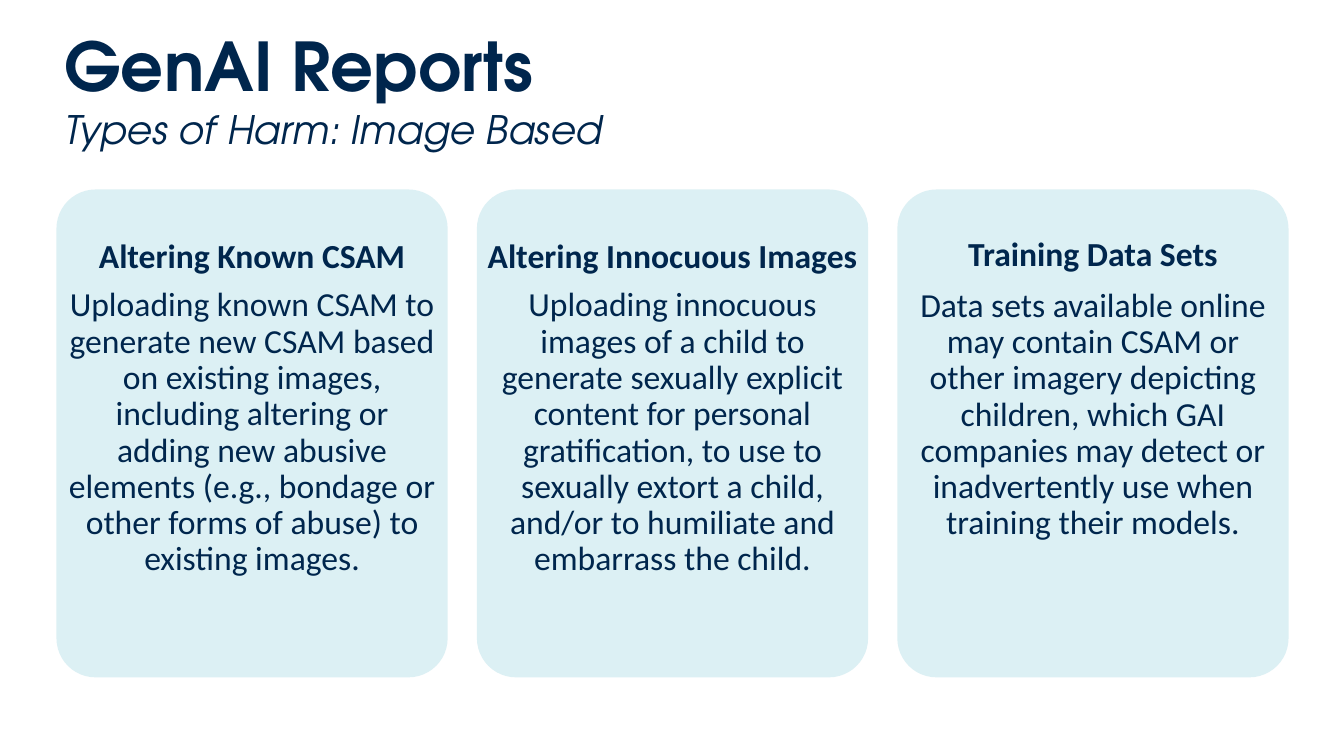
from pptx import Presentation
from pptx import util as u
from pptx.dml.color import RGBColor
from pptx.enum import shapes, text

COLORS = {"navy": "00264D", "card": "DCF0F4"}


def add_run(paragraph, words, size, face, bold=False, italic=False):
    run = paragraph.add_run()
    run.text = words
    run.font.size = u.Pt(size)
    run.font.name = face
    run.font.bold = bold
    run.font.italic = italic
    run.font.color.rgb = RGBColor.from_string(COLORS["navy"])


prs = Presentation()
prs.slide_width = u.Inches(13.33)
prs.slide_height = u.Inches(7.5)
slide = prs.slides.add_slide(prs.slide_layouts[5])

# Title and subtitle
title = slide.shapes.title
title.left, title.top = u.Inches(0.54), u.Inches(0.19)
title.width, title.height = u.Inches(11.93), u.Inches(1.38)
heading = title.text_frame
heading.word_wrap = True
heading.auto_size = text.MSO_AUTO_SIZE.NONE
heading.vertical_anchor = text.MSO_ANCHOR.TOP
topic = heading.paragraphs[0]
subtitle = heading.add_paragraph()
add_run(topic, "GenAI Reports", 48, "TeX Gyre Adventor", bold=True)
add_run(subtitle, "Types of Harm: Image Based", 28, "TeX Gyre Adventor", italic=True)
for line in (topic, subtitle):
    line.alignment = text.PP_ALIGN.LEFT

# Three cards: name, description, top of the text, space after the name
harms = [
    ("Altering Known CSAM",
     "Uploading known CSAM to generate new CSAM based on existing images, "
     "including altering or adding new abusive elements (e.g., bondage or "
     "other forms of abuse) to existing images.", 2.28, 8.4),
    ("Altering Innocuous Images",
     "Uploading innocuous images of a child to generate sexually explicit "
     "content for personal gratification, to use to sexually extort a child, "
     "and/or to humiliate and embarrass the child.", 2.28, 8.4),
    ("Training Data Sets",
     "Data sets available online may contain CSAM or other imagery depicting "
     "children, which GAI companies may detect or inadvertently use when "
     "training their models.", 2.26, 10.1),
]
CARD_LEFT, CARD_STEP, CARD_WIDTH = 0.56, 4.17, 3.88

for i, (harm, description, text_top, gap) in enumerate(harms):
    left = u.Inches(CARD_LEFT + i * CARD_STEP)
    width = u.Inches(CARD_WIDTH)
    card = slide.shapes.add_shape(
        shapes.MSO_SHAPE.ROUNDED_RECTANGLE, left, u.Inches(1.88), width, u.Inches(4.84))
    card.adjustments[0] = 0.1
    card.shadow.inherit = False
    card.fill.solid()
    card.fill.fore_color.rgb = RGBColor.from_string(COLORS["card"])
    card.line.fill.background()

    words = slide.shapes.add_textbox(left, u.Inches(text_top), width, u.Inches(3.7)).text_frame
    words.word_wrap = True
    words.margin_left = words.margin_right = u.Inches(0.1)
    words.margin_top = words.margin_bottom = u.Inches(0.1)
    name = words.paragraphs[0]
    detail = words.add_paragraph()
    add_run(name, harm, 24, "Calibri", bold=True)
    add_run(detail, description, 24, "Calibri")
    name.space_after = u.Pt(gap)
    for paragraph in (name, detail):
        paragraph.alignment = text.PP_ALIGN.CENTER
        paragraph.line_spacing = 0.9

prs.save("out.pptx")
